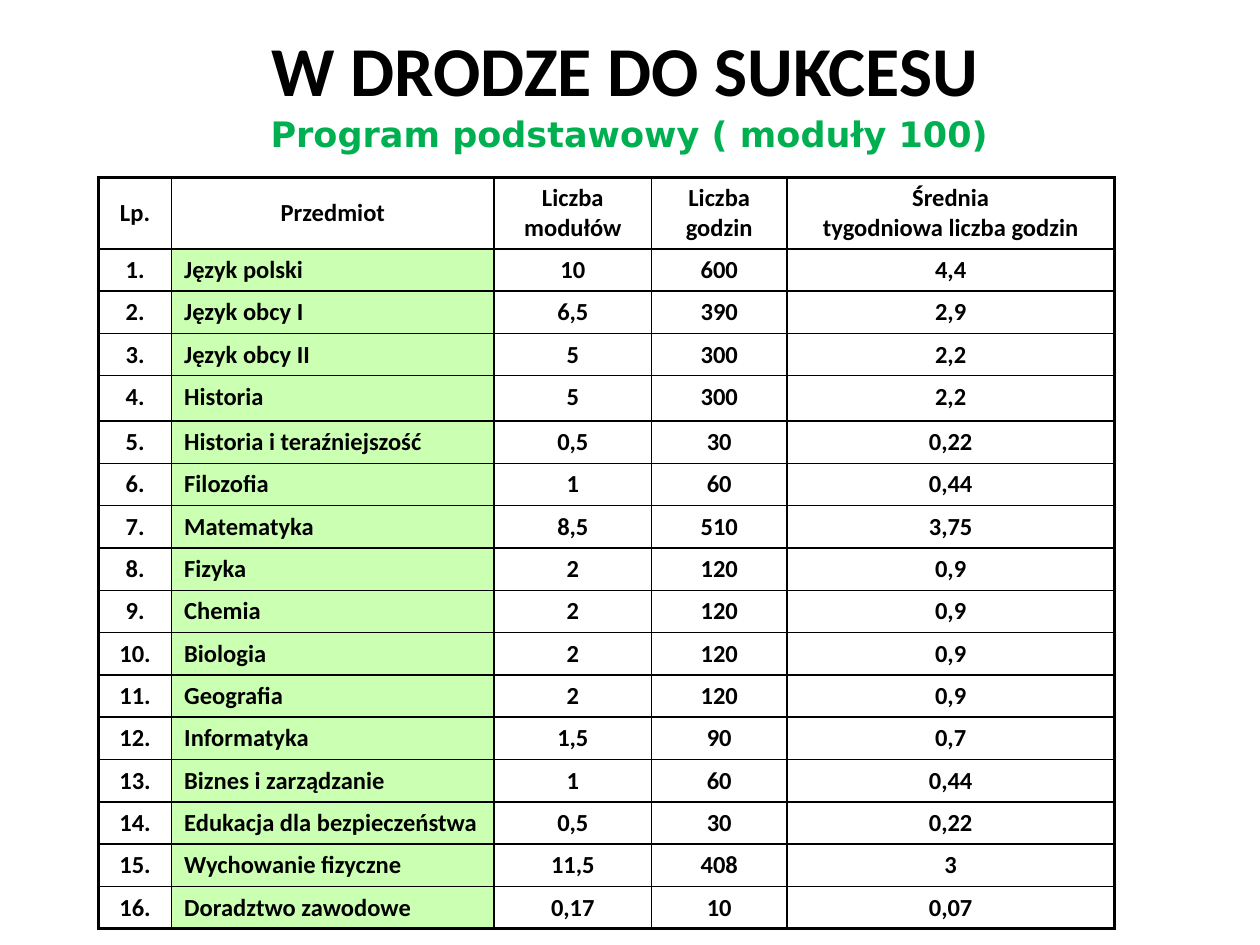
from dataclasses import dataclass

from lxml.etree import SubElement
from pptx import Presentation
from pptx.dml.color import RGBColor
from pptx.enum.text import MSO_ANCHOR, PP_ALIGN
from pptx.oxml.ns import qn
from pptx.util import Pt


@dataclass(frozen=True)
class Theme:
    black: str = "000000"
    green: str = "00B050"
    subject_fill: str = "99FF66"
    subject_opacity: int = 50
    heading_font: str = "DejaVu Sans"
    body_font: str = "Calibri"
    title_size: int = 40
    subtitle_size: int = 20
    table_size: int = 14
    outer_line: float = 2.25
    inner_line: float = 1


theme = Theme()


def write_text(text_frame, text, size, font=theme.body_font, color=theme.black,
               align=PP_ALIGN.CENTER):
    text_frame.word_wrap = True
    text_frame.text = text
    for paragraph in text_frame.paragraphs:
        paragraph.alignment = align
        for run in paragraph.runs:
            run.font.name = font
            run.font.size = Pt(size)
            run.font.bold = True
            run.font.color.rgb = RGBColor.from_string(color)


def add_border(cell, side, width):
    line = SubElement(cell._tc.get_or_add_tcPr(), qn(f"a:ln{side}"), w=str(Pt(width)))
    fill = SubElement(line, qn("a:solidFill"))
    SubElement(fill, qn("a:srgbClr"), val=theme.black)


presentation = Presentation()
presentation.slide_width = Pt(720)
presentation.slide_height = Pt(540)
slide = presentation.slides.add_slide(presentation.slide_layouts[6])

subtitle = slide.shapes.add_textbox(Pt(50.4), Pt(60.5), Pt(618.5), Pt(31.7))
write_text(subtitle.text_frame, "Program podstawowy ( moduły 100)", theme.subtitle_size,
           font=theme.heading_font, color=theme.green)

header = ["Lp.", "Przedmiot", "Liczba modułów", "Liczba godzin",
          "Średnia\ntygodniowa liczba godzin"]
subjects = [
    ("Język polski", "10", "600", "4,4"),
    ("Język obcy I", "6,5", "390", "2,9"),
    ("Język obcy II", "5", "300", "2,2"),
    ("Historia", "5", "300", "2,2"),
    ("Historia i teraźniejszość", "0,5", "30", "0,22"),
    ("Filozofia", "1", "60", "0,44"),
    ("Matematyka", "8,5", "510", "3,75"),
    ("Fizyka", "2", "120", "0,9"),
    ("Chemia", "2", "120", "0,9"),
    ("Biologia", "2", "120", "0,9"),
    ("Geografia", "2", "120", "0,9"),
    ("Informatyka", "1,5", "90", "0,7"),
    ("Biznes i zarządzanie", "1", "60", "0,44"),
    ("Edukacja dla bezpieczeństwa", "0,5", "30", "0,22"),
    ("Wychowanie fizyczne", "11,5", "408", "3"),
    ("Doradztwo zawodowe", "0,17", "10", "0,07"),
]
rows = [header] + [(f"{number}.", *subject) for number, subject in enumerate(subjects, 1)]
column_widths = [41.8, 184.3, 90, 77.3, 187.2]
row_heights = [40] + [24.2] * len(subjects)
row_heights[4] = 25.9
last_row = len(rows) - 1
last_column = len(header) - 1

table = slide.shapes.add_table(len(rows), len(header), Pt(56.3), Pt(101.3),
                               Pt(sum(column_widths)), Pt(sum(row_heights))).table
table.first_row = False
table.horz_banding = False
for column, width in zip(table.columns, column_widths):
    column.width = Pt(width)
for row, height in zip(table.rows, row_heights):
    row.height = Pt(height)

for row_index, values in enumerate(rows):
    for column_index, value in enumerate(values):
        cell = table.cell(row_index, column_index)
        is_header = row_index == 0
        is_subject = column_index == 1 and not is_header
        write_text(cell.text_frame, value, theme.table_size,
                   align=PP_ALIGN.LEFT if is_subject else PP_ALIGN.CENTER)
        cell.vertical_anchor = MSO_ANCHOR.MIDDLE if is_header else MSO_ANCHOR.TOP
        outer_sides = {"L": column_index == 0, "R": column_index == last_column,
                       "T": is_header, "B": row_index == last_row}
        for side, is_outer in outer_sides.items():
            add_border(cell, side, theme.outer_line if is_outer else theme.inner_line)
        if is_subject:
            cell.fill.solid()
            cell.fill.fore_color.rgb = RGBColor.from_string(theme.subject_fill)
            fill_color = cell._tc.tcPr.find(f"{qn('a:solidFill')}/{qn('a:srgbClr')}")
            SubElement(fill_color, qn("a:alpha"), val=str(theme.subject_opacity * 1000))
        else:
            cell.fill.background()

title = slide.shapes.add_textbox(Pt(61.9), Pt(11.5), Pt(590.4), Pt(55.4))
write_text(title.text_frame, "W DRODZE DO SUKCESU", theme.title_size)

presentation.save("out.pptx")
